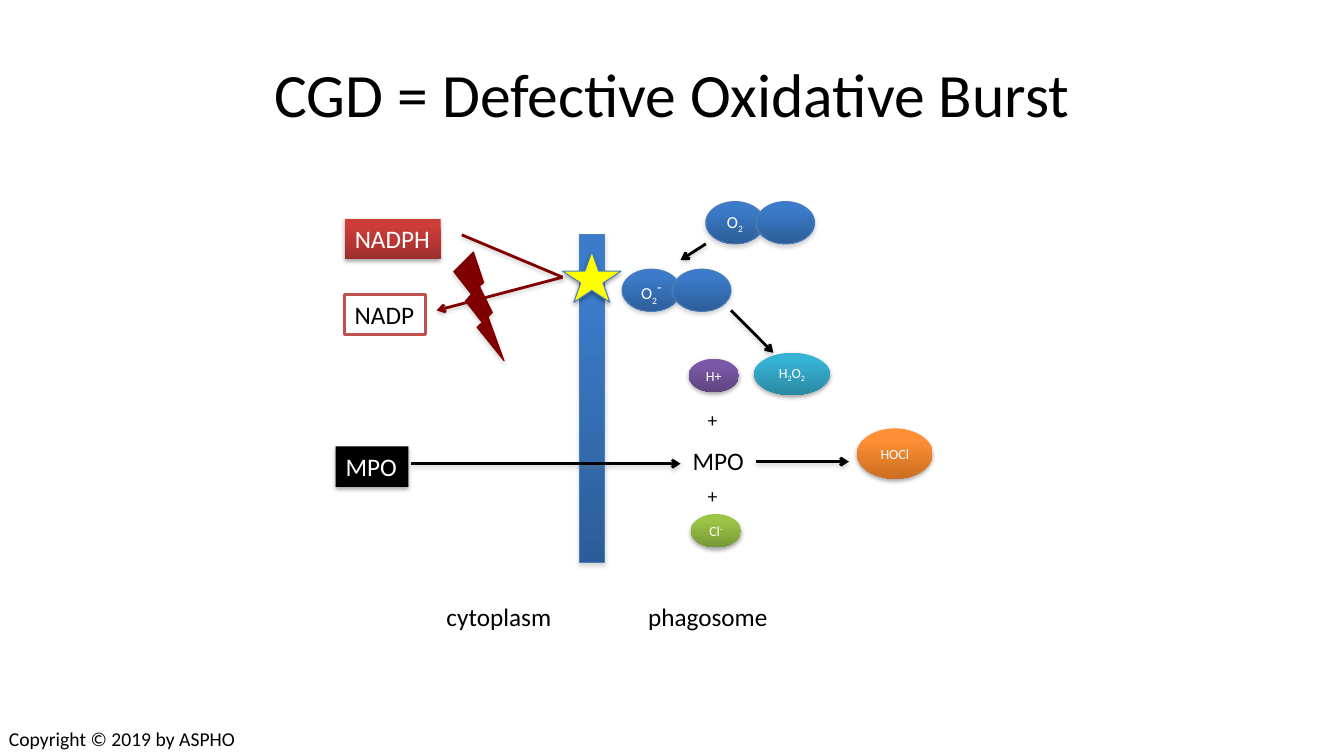
from lxml import etree
from pptx import Presentation
from pptx.dml.color import RGBColor
from pptx.enum.shapes import MSO_CONNECTOR as CONN, MSO_SHAPE as SHAPE
from pptx.enum.text import MSO_ANCHOR as ANCHOR, PP_ALIGN as ALIGN
from pptx.oxml.ns import qn
from pptx.util import Inches, Pt

FONT = "Calibri"
BLACK = RGBColor(0x00, 0x00, 0x00)
WHITE = RGBColor(0xFF, 0xFF, 0xFF)
GRAY = RGBColor(0x80, 0x80, 0x80)
MAROON = RGBColor(0x80, 0x00, 0x00)
YELLOW = RGBColor(0xFF, 0xFF, 0x00)
BLUE_LINE = RGBColor(0x4A, 0x7E, 0xBB)
RED_LINE = RGBColor(0xC0, 0x50, 0x4D)
# Gradients: top colour, bottom colour
BLUE = (RGBColor(0x3B, 0x7B, 0xC9), RGBColor(0x2C, 0x5D, 0x98))
RED = (RGBColor(0xCC, 0x3D, 0x39), RGBColor(0x9C, 0x2F, 0x2D))
PURPLE = (RGBColor(0x7B, 0x58, 0xA7), RGBColor(0x5F, 0x44, 0x80))
TEAL = (RGBColor(0x36, 0xB2, 0xD4), RGBColor(0x2A, 0x88, 0xA2))
GREEN = (RGBColor(0x9C, 0xC5, 0x47), RGBColor(0x77, 0x97, 0x37))
ORANGE = (RGBColor(0xFF, 0x90, 0x35), RGBColor(0xCC, 0x6E, 0x20))


def box(x, y, w, h):
    return Inches(x), Inches(y), Inches(w), Inches(h)


def add_shadow(sp, color, alpha=35, dist=1.8):
    pr = sp._element.spPr
    for old in pr.findall(qn("a:effectLst")):
        pr.remove(old)
    effects = etree.SubElement(pr, qn("a:effectLst"))
    shadow = etree.SubElement(effects, qn("a:outerShdw"), blurRad=str(Pt(3.1)),
                              dist=str(Pt(dist)), dir="5400000", rotWithShape="0")
    clr = etree.SubElement(shadow, qn("a:srgbClr"), val=str(color))
    etree.SubElement(clr, qn("a:alpha"), val=str(alpha * 1000))


def write(sp, runs, size, color, align=ALIGN.LEFT, anchor=ANCHOR.TOP, wrap=False):
    """Fill one paragraph; each run is a string or (text, baseline %, size)."""
    tf = sp.text_frame
    tf.word_wrap = wrap
    tf.vertical_anchor = anchor
    p = tf.paragraphs[0]
    p.alignment = align
    p.font.name, p.font.size, p.font.color.rgb = FONT, Pt(size), color
    for run in runs:
        text, baseline, run_size = (run, 0, size) if isinstance(run, str) else run
        r = p.add_run()
        r.text = text
        if baseline:
            r.font.size = Pt(run_size)
            r._r.get_or_add_rPr().set("baseline", str(baseline * 1000))


def add_label(s, x, y, w, h, text, size=18, **layout):
    write(s.shapes.add_textbox(*box(x, y, w, h)), [text], size, BLACK, **layout)


def add_figure(s, kind, x, y, w, h, fill, line=None, width=0.75, shadow=BLACK):
    sp = s.shapes.add_shape(kind, *box(x, y, w, h))
    sp.shadow.inherit = False
    if isinstance(fill, RGBColor):
        sp.fill.solid()
        sp.fill.fore_color.rgb = fill
    else:
        sp.fill.gradient()
        sp.fill.gradient_angle = 270
        for stop, position, color in zip(sp.fill.gradient_stops, (0.2, 1), fill):
            stop.position, stop.color.rgb = position, color
    if line is None:
        sp.line.fill.background()
    else:
        sp.line.color.rgb, sp.line.width = line, Pt(width)
    if shadow is not None:
        add_shadow(sp, shadow)
    return sp


def add_molecule(s, x, y, w, h, fill, runs=(), size=10, line=None, shadow=BLACK):
    sp = add_figure(s, SHAPE.OVAL, x, y, w, h, fill, line, shadow=shadow)
    if runs:
        write(sp, runs, size, WHITE, ALIGN.CENTER, ANCHOR.MIDDLE)


def add_line(s, x1, y1, x2, y2, color=BLACK, arrow=True):
    c = s.shapes.add_connector(CONN.STRAIGHT, *box(x1, y1, x2, y2))
    c.line.color.rgb, c.line.width = color, Pt(2)
    if arrow:
        etree.SubElement(c.line._get_or_add_ln(), qn("a:tailEnd"), type="arrow")
    add_shadow(c, GRAY, 38, 1.6)


def draw_membrane(s, x, y, w, h):
    add_figure(s, SHAPE.RECTANGLE, x, y, w, h, BLUE, BLUE_LINE, shadow=GRAY)


def draw_cytoplasm(s, x, y):
    # Enzyme and cofactor tags
    tags = [
        ("NADPH", 0.09, 0, 0.95, RED, None, WHITE, BLACK),
        ("NADP", 0.09, 0.75, 0.8, WHITE, RED_LINE, BLACK, None),
        ("MPO", 0, 2.26, 0.72, BLACK, None, WHITE, BLACK),
    ]
    for text, dx, dy, w, fill, line, color, shadow in tags:
        sp = add_figure(s, SHAPE.RECTANGLE, x + dx, y + dy, w, 0.4, fill, line, 2, shadow)
        write(sp, [text], 18, color)
    # NADPH to oxidase and back, then MPO across the membrane
    add_line(s, x + 1.25, y + 0.16, x + 2.25, y + 0.58, MAROON, arrow=False)
    add_line(s, x + 2.25, y + 0.58, x + 1, y + 0.91, MAROON)
    add_line(s, x + 0.75, y + 2.43, x + 3.42, y + 2.43)
    add_label(s, x + 1, y + 3.75, 1.25, 0.4, "cytoplasm")


def draw_phagosome(s, x, y):
    # Oxygen and superoxide, each a pair of overlapping atoms
    oxygen = ["O", ("2", -25, 12)]
    pairs = [(0.83, 0, oxygen), (0, 0.67, oxygen + [("-", 30, 18)])]
    for dx, dy, runs in pairs:
        for step, atom_runs in ((0, runs), (0.5, ())):
            add_molecule(s, x + dx + step, y + dy, 0.58, 0.42, BLUE, atom_runs, 12,
                         BLUE_LINE, GRAY)
    # Reagents and product
    two = ("2", -25, 10)
    add_molecule(s, x + 0.66, y + 1.56, 0.5, 0.33, PURPLE, ["H+"])
    add_molecule(s, x + 1.31, y + 1.5, 0.75, 0.42, TEAL, ["H", two, "O", two])
    add_molecule(s, x + 0.68, y + 3.1, 0.5, 0.33, GREEN, ["Cl", ("-", 30, 10)])
    add_molecule(s, x + 2.33, y + 2.25, 0.75, 0.5, ORANGE, ["HOCl"])
    # Labels
    add_label(s, x + 0.6, y + 2.37, 0.72, 0.4, "MPO")
    for dy in (2, 2.75):
        add_label(s, x + 0.75, y + dy, 0.3, 0.34, "+", 14)
    add_label(s, x + 0.16, y + 3.92, 1.4, 0.4, "phagosome")
    # Reaction arrows
    add_line(s, x + 0.83, y + 0.42, x + 0.58, y + 0.58)
    add_line(s, x + 1.08, y + 1.08, x + 1.5, y + 1.5)
    add_line(s, x + 1.33, y + 2.58, x + 2.25, y + 2.58)


def draw_defect(s, x, y):
    # Oxidase star on the membrane, bolt across the NADPH pathway
    add_figure(s, SHAPE.STAR_5_POINT, x + 1.08, y, 0.58, 0.5, YELLOW, BLUE_LINE)
    add_figure(s, SHAPE.LIGHTNING_BOLT, x, y, 0.5, 1.08, MAROON, MAROON, shadow=GRAY)


def main():
    prs = Presentation()
    prs.slide_width, prs.slide_height = Inches(13.33), Inches(7.5)
    s = prs.slides.add_slide(prs.slide_layouts[6])
    add_label(s, 0.67, 0.3, 12, 1.25, "CGD = Defective Oxidative Burst", 44,
              align=ALIGN.CENTER, anchor=ANCHOR.MIDDLE, wrap=True)
    draw_membrane(s, 5.75, 2.33, 0.25, 3.25)
    draw_cytoplasm(s, 3.33, 2.17)
    draw_phagosome(s, 6.17, 2)
    draw_defect(s, 4.5, 2.5)
    add_label(s, -0.01, 7.16, 2.48, 0.34, "Copyright © 2019 by ASPHO", 14, wrap=True)
    prs.save("out.pptx")


if __name__ == "__main__":
    main()
